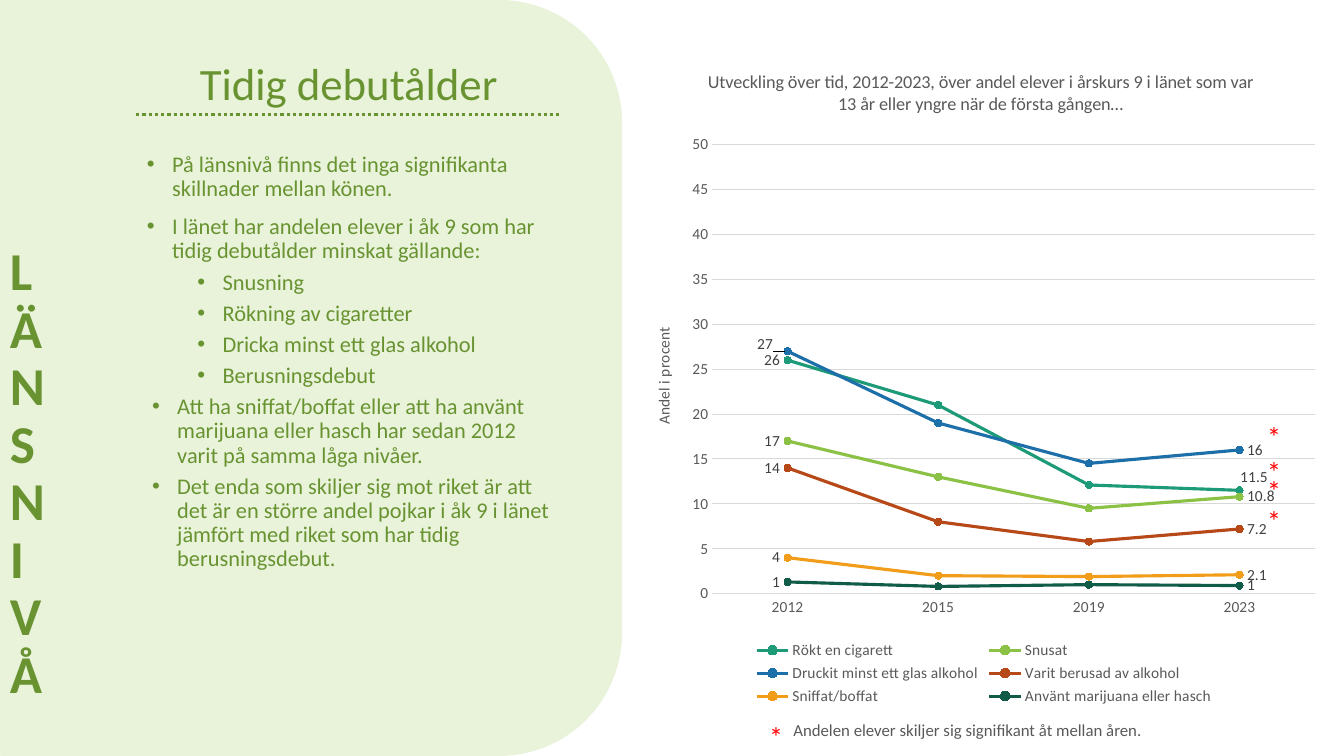
from lxml import etree
from pptx import Presentation
from pptx.chart.data import CategoryChartData
from pptx.dml.color import RGBColor
from pptx.enum.chart import (XL_CHART_TYPE, XL_LABEL_POSITION, XL_LEGEND_POSITION,
                             XL_MARKER_STYLE, XL_TICK_MARK)
from pptx.enum.dml import MSO_LINE
from pptx.enum.shapes import MSO_CONNECTOR, MSO_SHAPE
from pptx.enum.text import MSO_ANCHOR, PP_ALIGN
from pptx.oxml.ns import qn
from pptx.util import Pt

PX = 9144  # 100 px to the inch
FONT = "Calibri"
GREEN, PALE, GREY, RULE, RED = "699331", "E8F3DA", "595959", "D9D9D9", "FF0000"
TOP, BOTTOM, CENTER = MSO_ANCHOR.TOP, MSO_ANCHOR.BOTTOM, PP_ALIGN.CENTER
LEFT_OF, RIGHT_OF = XL_LABEL_POSITION.LEFT, XL_LABEL_POSITION.RIGHT
NO_TICK = XL_TICK_MARK.NONE
rgb = RGBColor.from_string

prs = Presentation()
prs.slide_width, prs.slide_height = 1333 * PX, 750 * PX
slide = prs.slides.add_slide(prs.slide_layouts[6])
shapes = slide.shapes


def add_text(box, paragraphs, size, color=GREEN, bold=False, align=None,
             anchor=TOP, line_spacing=None, fill=None, vert=None):
    """Each paragraph is (text, left margin in px or None for no bullet, space before)."""
    textbox = shapes.add_textbox(*(n * PX for n in box))
    if fill:
        textbox.fill.solid()
        textbox.fill.fore_color.rgb = rgb(fill)
    frame = textbox.text_frame
    frame.word_wrap = True
    frame.vertical_anchor = anchor
    if vert:
        textbox.element.find(".//" + qn("a:bodyPr")).set("vert", vert)
    for i, (text, margin, before) in enumerate(paragraphs):
        par = frame.add_paragraph() if i else frame.paragraphs[0]
        par.alignment, par.line_spacing, par.space_before = align, line_spacing, Pt(before)
        run = par.add_run()
        run.text = text
        run.font.name, run.font.size, run.font.bold = FONT, Pt(size), bold
        run.font.color.rgb = rgb(color)
        if margin is not None:
            props = par._p.get_or_add_pPr()
            props.set("marL", str(margin * PX))
            props.set("indent", str(-25 * PX))
            etree.SubElement(props, qn("a:buFont")).set("typeface", "Arial")
            etree.SubElement(props, qn("a:buChar")).set("char", "•")


def set_layout(parent, index, **values):
    """Place a chart part by fractions of the chart area."""
    for old in parent.findall(qn("c:layout")):
        parent.remove(old)
    layout = etree.Element(qn("c:layout"))
    manual = etree.SubElement(layout, qn("c:manualLayout"))
    for key, value in values.items():
        etree.SubElement(manual, qn("c:" + key)).set("val", str(value))
    parent.insert(index, layout)


# Pale panel on the left
panel = shapes.add_shape(MSO_SHAPE.ROUNDED_RECTANGLE, -114 * PX, 0, 731 * PX, 750 * PX)
panel.shadow.inherit = False
panel.fill.solid()
panel.fill.fore_color.rgb = rgb(PALE)
panel.line.fill.background()

# Line chart
trends = [
    ("Rökt en cigarett", (26, 21, 12.1, 11.5), "1D9A78", "General"),
    ("Snusat", (17, 13, 9.5, 10.8), "8BC145", "General"),
    ("Druckit minst ett glas alkohol", (27, 19, 14.5, 16), "1D6FA9", "General"),
    ("Varit berusad av alkohol", (14, 8, 5.8, 7.2), "B74919", "General"),
    ("Sniffat/boffat", (4, 2, 1.9, 2.1), "F19D19", "General"),
    ("Använt marijuana eller hasch", (1.3, 0.8, 1, 0.9), "115C48", "0"),
]
data = CategoryChartData()
data.categories = ["2012", "2015", "2019", "2023"]
for name, values, _, number_format in trends:
    data.add_series(name, values, number_format)
chart = shapes.add_chart(XL_CHART_TYPE.LINE_MARKERS, 627 * PX, 47 * PX,
                         691 * PX, 657 * PX, data).chart
chart.font.name, chart.font.size = FONT, Pt(11)
chart.font.color.rgb = rgb(GREY)
chart.plots[0].vary_by_categories = False

for series, (_, _, color, _) in zip(chart.plots[0].series, trends):
    series.smooth = False
    series.format.line.width = Pt(2.25)
    series.format.line.color.rgb = rgb(color)
    series.marker.style, series.marker.size = XL_MARKER_STYLE.CIRCLE, 5
    series.marker.format.fill.solid()
    series.marker.format.fill.fore_color.rgb = rgb(color)
    series.marker.format.line.color.rgb = rgb(color)
    series.data_labels.show_value = False
    for point, side in ((0, LEFT_OF), (3, RIGHT_OF)):
        label = series.points[point].data_label
        label.font.name, label.font.size = FONT, Pt(11)
        label.font.color.rgb = rgb("404040")
        label.position = side

# Two end labels are nudged clear of their neighbours
for series_index, label_index, dx, dy in ((0, 1, -0.01, -0.02), (2, 0, -0.01, -0.01)):
    line = chart.element.findall(".//" + qn("c:ser"))[series_index]
    set_layout(line.findall(".//" + qn("c:dLbl"))[label_index], 1, x=dx, y=dy)

# Axes
years, percent = chart.category_axis, chart.value_axis
for axis in (years, percent):
    axis.major_tick_mark = axis.minor_tick_mark = NO_TICK
    axis.tick_labels.font.name, axis.tick_labels.font.size = FONT, Pt(11)
    axis.tick_labels.font.color.rgb = rgb(GREY)
percent.minimum_scale, percent.maximum_scale, percent.major_unit = 0, 50, 5
percent.format.line.fill.background()
for rule in (years.format.line, percent.major_gridlines.format.line):
    rule.color.rgb = rgb(RULE)
    rule.width = Pt(0.75)

# Chart and axis titles
chart.has_title = percent.has_title = True
for title, text, size in (
    (chart.chart_title, "Utveckling över tid, 2012-2023, över andel elever i årskurs 9 "
     "i länet som var 13 år eller yngre när de första gången…", 13),
    (percent.axis_title, "Andel i procent", 11),
):
    title.text_frame.text = text
    font = title.text_frame.paragraphs[0].runs[0].font
    font.name, font.size, font.bold = FONT, Pt(size), False
    font.color.rgb = rgb(GREY)
chart.chart_title.include_in_layout = False
axis_body = chart.element.find(".//" + qn("c:valAx") + "/" + qn("c:title")
                               + "//" + qn("a:bodyPr"))
axis_body.set("rot", "-5400000")
axis_body.set("vert", "horz")

# Legend and plot area
chart.has_legend = True
chart.legend.position = XL_LEGEND_POSITION.BOTTOM
chart.legend.include_in_layout = False
chart.legend.font.name, chart.legend.font.size = FONT, Pt(11)
chart.legend.font.color.rgb = rgb(GREY)
set_layout(chart.element.find(".//" + qn("c:legend")), 1,
           xMode="edge", yMode="edge", x=0.17, y=0.89, w=0.67, h=0.11)
set_layout(chart.element.find(".//" + qn("c:plotArea")), 0, layoutTarget="inner",
           xMode="edge", yMode="edge", x=0.115, y=0.147, w=0.865, h=0.678)

# Stacked side label, heading and bullets
add_text((0, 47, 105, 657), [("LÄNSNIVÅ", None, 0)], 38, bold=True,
         anchor=BOTTOM, line_spacing=0.9, vert="wordArtVert")
findings = [
    ("På länsnivå finns det inga signifikanta skillnader mellan könen.", 25, 10),
    ("I länet har andelen elever i åk 9 som har tidig debutålder minskat gällande:", 25, 10),
    ("Snusning", 75, 5),
    ("Rökning av cigaretter", 75, 5),
    ("Dricka minst ett glas alkohol", 75, 5),
    ("Berusningsdebut", 75, 5),
    ("Att ha sniffat/boffat eller att ha använt marijuana eller hasch har sedan 2012 "
     "varit på samma låga nivåer.", 30, 5),
    ("Det enda som skiljer sig mot riket är att det är en större andel pojkar i åk 9 "
     "i länet jämfört med riket som har tidig berusningsdebut.", 30, 5),
]
add_text((136, 147, 420, 520), findings, 16, line_spacing=0.9, fill=PALE)
add_text((125, 16, 442, 98), [("Tidig debutålder", None, 0)], 32,
         align=CENTER, anchor=BOTTOM, line_spacing=0.9)

# Dotted rule under the heading
underline = shapes.add_connector(MSO_CONNECTOR.STRAIGHT, 135 * PX, 114 * PX, 556 * PX, 114 * PX)
underline.line.color.rgb = rgb(GREEN)
underline.line.width = Pt(2.25)
underline.line.dash_style = MSO_LINE.ROUND_DOT
etree.SubElement(underline.element.find(qn("p:spPr")), qn("a:effectLst"))

# Significance marks and their explanation
for left, top in ((1247, 465), (1247, 446), (1247, 411), (1247, 495), (753, 709)):
    add_text((left, top, 50, 69), [("*", None, 0)], 20, color=RED)
add_text((777, 709, 471, 30),
         [("Andelen elever skiljer sig signifikant åt mellan åren.", None, 0)], 12, color=GREY)

prs.save("out.pptx")
